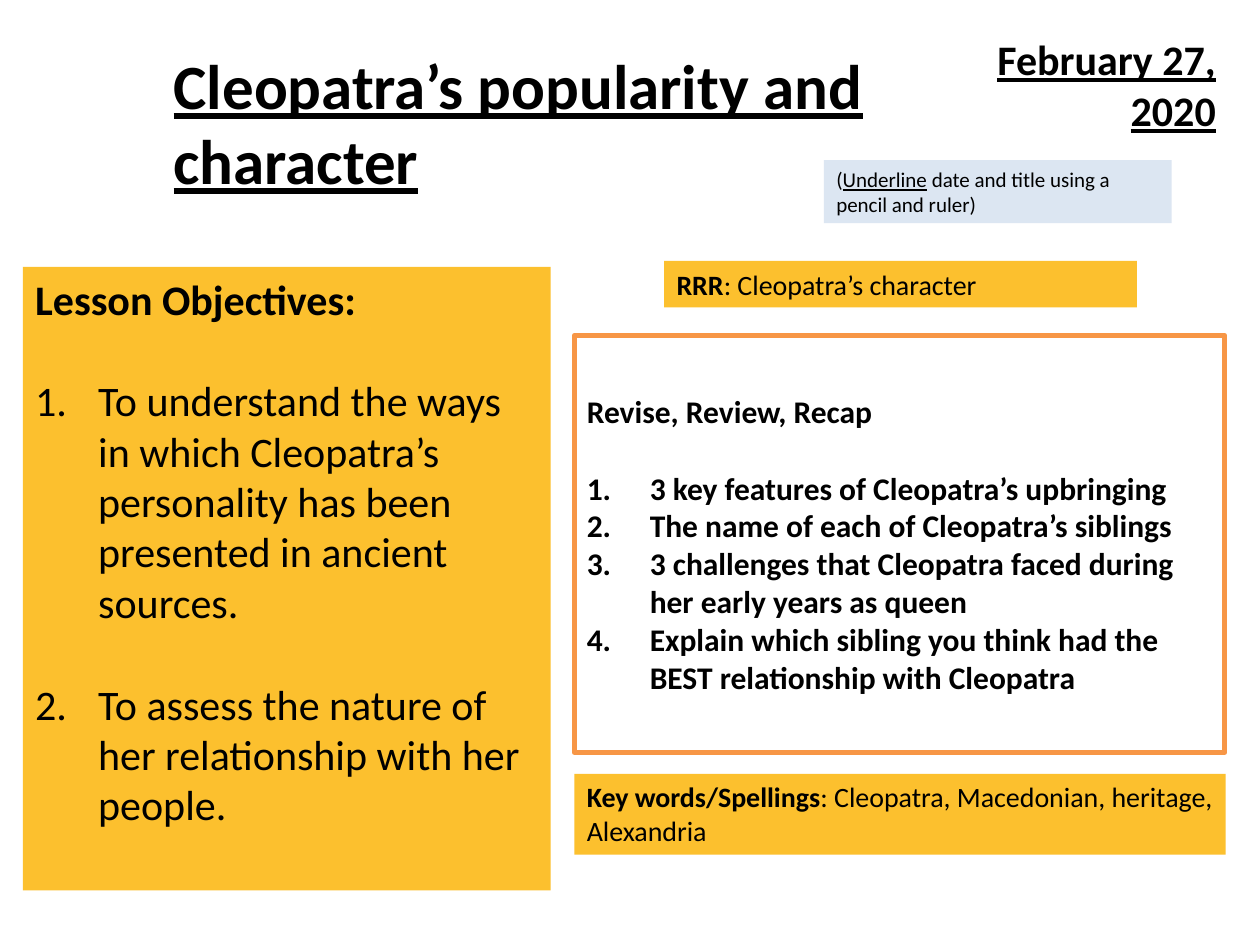
from dataclasses import dataclass

from lxml import etree
from pptx import Presentation, util as u
from pptx.dml.color import RGBColor
from pptx.enum import shapes, text
from pptx.oxml import ns


@dataclass(frozen=True)
class Theme:
    font: str = "Calibri"
    ink: str = "000000"
    gold: str = "FCC02E"
    pale_blue: str = "DCE6F2"
    white: str = "FFFFFF"
    orange: str = "F79646"
    title: int = 36
    heading: int = 24
    task: int = 18
    label: int = 16
    note: int = 12
    line_height: float = 1.22


THEME = Theme()


def add_panel(page, place, fill, border=None):
    """Filled rectangle; returns its text frame."""
    box = page.shapes.add_shape(shapes.MSO_SHAPE.RECTANGLE, *map(u.Cm, place))
    box.shadow.inherit = False
    box.fill.solid()
    box.fill.fore_color.rgb = RGBColor.from_string(fill)
    if border:
        box.line.color.rgb = RGBColor.from_string(border)
        box.line.width = u.Pt(3)
    else:
        box.line.fill.background()
    box.text_frame.word_wrap = True
    box.text_frame.vertical_anchor = text.MSO_ANCHOR.TOP
    return box.text_frame


def add_span(para, words, size, bold=False, underline=False):
    span = para.add_run()
    span.text = words
    span.font.name = THEME.font
    span.font.size = u.Pt(size)
    span.font.bold = bold
    span.font.underline = underline
    span.font.color.rgb = RGBColor.from_string(THEME.ink)


def add_heading(page, place, words, size, align=text.PP_ALIGN.LEFT):
    """Bold underlined text without a fill."""
    box = page.shapes.add_textbox(*map(u.Cm, place))
    box.text_frame.word_wrap = True
    para = box.text_frame.paragraphs[0]
    para.alignment = align
    add_span(para, words, size, bold=True, underline=True)


def add_label(page, place, term, words):
    """Gold strip with a bold term and plain text."""
    para = add_panel(page, place, THEME.gold).paragraphs[0]
    para.alignment = text.PP_ALIGN.LEFT
    add_span(para, term, THEME.label, bold=True)
    add_span(para, words, THEME.label)


def add_numbered_list(frame, heading, items, size, bold, spread):
    """Bold heading, then numbered items; spread puts a line before each."""
    para = frame.paragraphs[0]
    para.alignment = text.PP_ALIGN.LEFT
    add_span(para, heading, size, bold=True)
    for index, words in enumerate(items):
        para = frame.add_paragraph()
        para.alignment = text.PP_ALIGN.LEFT
        if spread or index == 0:
            para.space_before = u.Pt(round(size * THEME.line_height, 1))
        properties = para._p.get_or_add_pPr()
        properties.set("marL", str(u.Cm(1.27)))
        properties.set("indent", str(-u.Cm(1.27)))
        etree.SubElement(properties, ns.qn("a:buFont"), typeface="+mj-lt")
        etree.SubElement(properties, ns.qn("a:buAutoNum"), type="arabicPeriod")
        add_span(para, words, size, bold=bold)


def main():
    deck = Presentation()
    deck.slide_width, deck.slide_height = u.Cm(25.4), u.Cm(19.05)
    page = deck.slides.add_slide(deck.slide_layouts[6])

    # Underlining reminder
    para = add_panel(page, (16.61, 3.23, 7.01, 1.27), THEME.pale_blue).paragraphs[0]
    para.alignment = text.PP_ALIGN.LEFT
    add_span(para, "(", THEME.note)
    add_span(para, "Underline", THEME.note, underline=True)
    add_span(para, " date and title using a pencil and ruler)", THEME.note)

    # Lesson objectives
    objectives = add_panel(page, (0.46, 5.38, 10.64, 12.57), THEME.gold)
    add_numbered_list(objectives, "Lesson Objectives:", [
        "To understand the ways in which Cleopatra’s personality has been "
        "presented in ancient sources.",
        "To assess the nature of her relationship with her people.",
    ], THEME.heading, bold=False, spread=True)

    # Title and date
    add_heading(page, (3.25, 0.81, 16.74, 3.33),
                "Cleopatra’s popularity and character", THEME.title)
    add_heading(page, (18.16, 0.56, 6.6, 2.31), "February 27, 2020",
                THEME.heading, text.PP_ALIGN.RIGHT)

    # Key words and starter labels
    add_label(page, (11.58, 15.6, 13.13, 1.63), "Key words/Spellings",
              ": Cleopatra, Macedonian, heritage, Alexandria")
    add_label(page, (13.39, 5.26, 9.53, 0.94), "RRR", ": Cleopatra’s character")

    # Recap tasks
    recap = add_panel(page, (11.58, 6.76, 13.11, 8.41), THEME.white, THEME.orange)
    recap.vertical_anchor = text.MSO_ANCHOR.MIDDLE
    add_numbered_list(recap, "Revise, Review, Recap", [
        "3 key features of Cleopatra’s upbringing",
        "The name of each of Cleopatra’s siblings",
        "3 challenges that Cleopatra faced during her early years as queen",
        "Explain which sibling you think had the BEST relationship with Cleopatra",
    ], THEME.task, bold=True, spread=False)

    deck.save("out.pptx")


if __name__ == "__main__":
    main()
